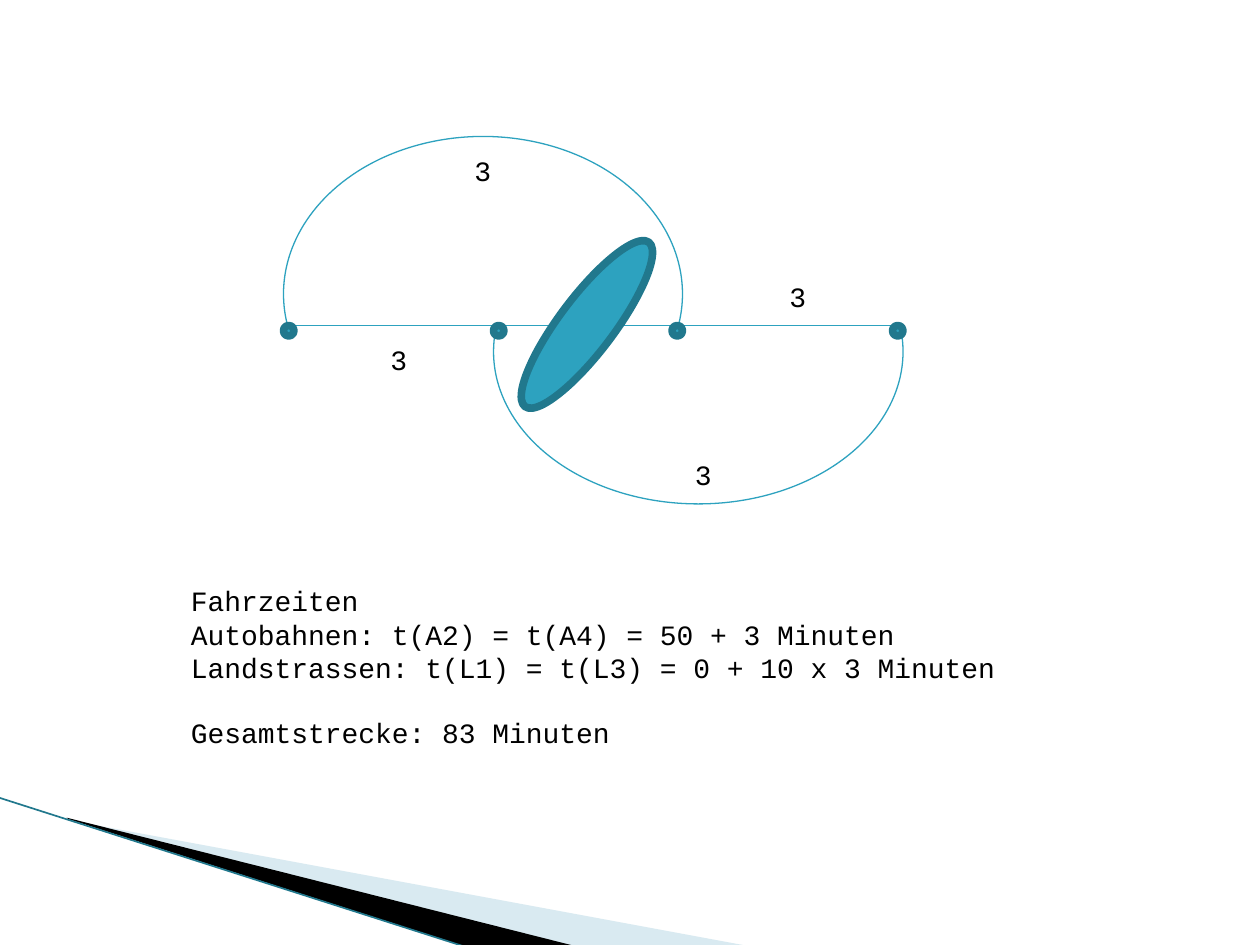
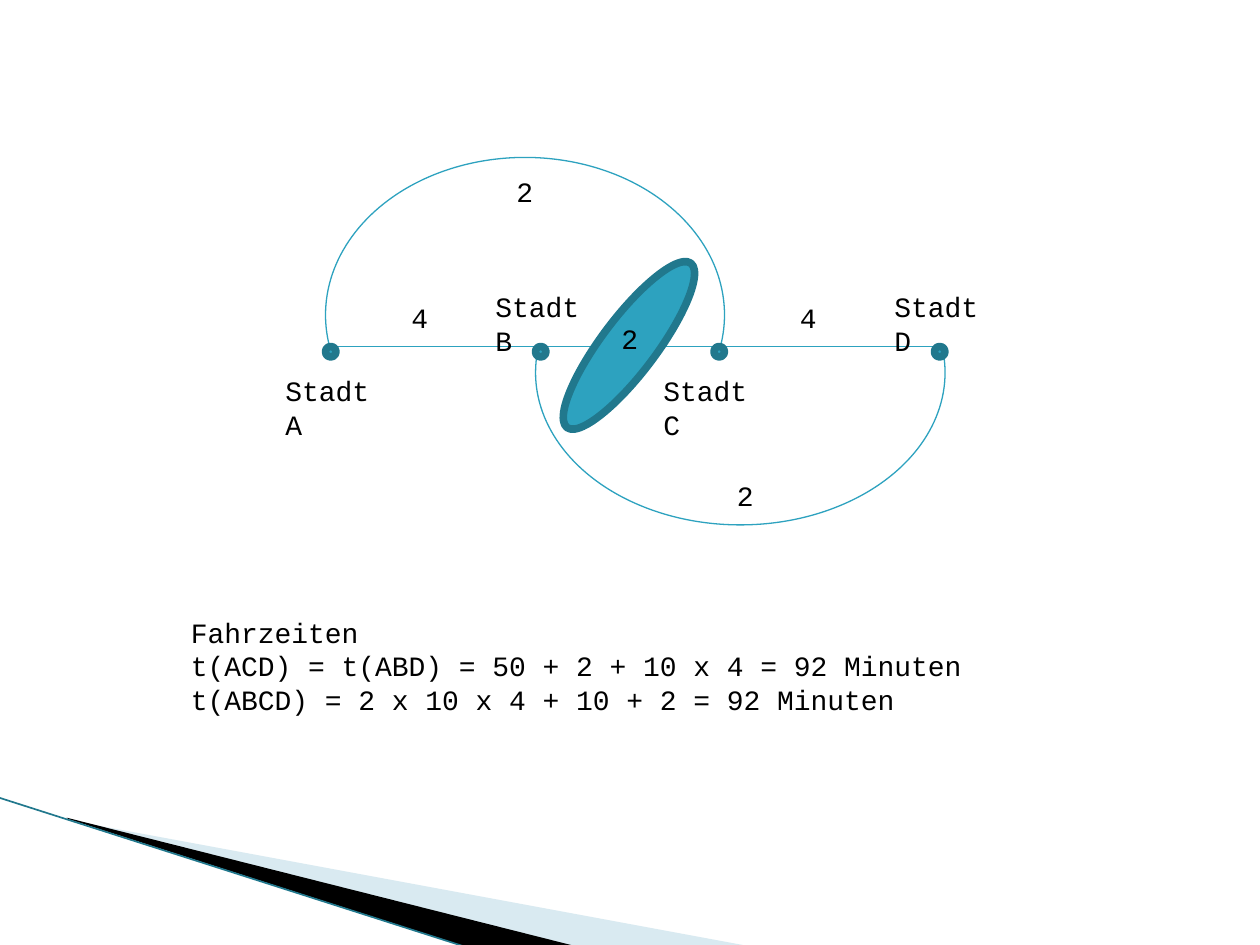
"""Build two slides that compare travel times on a small road network."""
from dataclasses import dataclass

from lxml.etree import SubElement
from pptx import Presentation
from pptx.dml.color import RGBColor
from pptx.enum.shapes import MSO_CONNECTOR, MSO_SHAPE
from pptx.enum.text import PP_ALIGN
from pptx.oxml.ns import qn
from pptx.util import Inches, Pt

CELL = Inches(1) / 12
COLUMNS, ROWS = 120, 90
TEAL, DARK_TEAL, PALE_TEAL, BLACK = "2DA2BF", "21788D", "A0CBDC", "000000"
TEXT_FORMAT = {"name": "Courier New", "size": Pt(16)}
THIN, THICK = 0.75, 4.33
LABEL_ROWS = 4.4
CITY_COLUMNS = (0, 20, 37, 58)


@dataclass(frozen=True)
class Label:
    """A text placed in grid cells from the first city."""
    text: str
    column: float
    row: float
    columns: float = 4


@dataclass(frozen=True)
class Road:
    """A curved road between two cities with its start and end angles."""
    column: float
    row: float
    columns: float
    rows: float
    angles: tuple[float, float]
    rotation: float = 0


@dataclass(frozen=True)
class Wedge:
    """A filled band at the foot of the slide, with corners in inches."""
    corners: tuple[tuple[float, float], ...]
    colour: str
    opacity: int = 100


@dataclass(frozen=True)
class Scenario:
    """The content of one slide."""
    column: float
    row: float
    labels: tuple[Label, ...]
    lines: tuple[str, ...]
    lines_row: float
    total: str = ""


HIGHWAYS = (
    Road(0, -18, 38, 30, (102.94, 5.11)),
    Road(25, -17, 29, 39, (157.66, 57.98), 90),
)
WEDGES = (
    Wedge(((0.55, 6.51), (5.95, 7.51), (4.56, 7.51), (0.55, 6.5)), PALE_TEAL, 40),
    Wedge(((0.53, 6.49), (4.57, 7.51), (3.72, 7.52), (0.54, 6.5)), BLACK),
)
SCENARIOS = (
    Scenario(
        27, 31,
        (Label("3", 17, -17), Label("3", 38, 12, 5),
         Label("3", 9, 1), Label("3", 47, -5, 5)),
        ("Fahrzeiten",
         "Autobahnen: t(A2) = t(A4) = 50 + 3 Minuten",
         "Landstrassen: t(L1) = t(L3) = 0 + 10 x 3 Minuten"),
        55, "Gesamtstrecke: 83 Minuten"),
    Scenario(
        31, 33,
        (Label("Stadt A", -5, 2, 12), Label("Stadt B", 15, -6, 12),
         Label("Stadt C", 31, 2, 12), Label("Stadt D", 53, -6, 12),
         Label("2", 17, -17), Label("2", 38, 12, 5),
         Label("4", 7, -5), Label("4", 44, -5, 5), Label("2", 27, -3)),
        ("Fahrzeiten",
         "t(ACD) = t(ABD) = 50 + 2 + 10 x 4 = 92 Minuten",
         "t(ABCD) = 2 x 10 x 4 + 10 + 2 = 92 Minuten"),
        58),
)


def cells(*counts: float) -> list[int]:
    """Turn counts of grid cells into lengths."""
    return [round(count * CELL) for count in counts]


def paint(target, colour: str) -> None:
    """Give a fill a solid colour."""
    target.solid()
    target.fore_color.rgb = RGBColor.from_string(colour)


def outline(line, colour: str, width: float) -> None:
    """Give a line its colour and width."""
    paint(line.fill, colour)
    line.width = Pt(width)


def add_line(slide, ends: list[int], colour: str, width: float) -> None:
    """Draw a straight line without a shadow."""
    connector = slide.shapes.add_connector(MSO_CONNECTOR.STRAIGHT, *ends)
    outline(connector.line, colour, width)
    SubElement(connector._element.spPr, qn("a:effectLst"))


def add_wedge(slide, wedge: Wedge) -> None:
    """Draw one band of the footer."""
    corners = [(Inches(x), Inches(y)) for x, y in wedge.corners]
    builder = slide.shapes.build_freeform(*corners[0])
    builder.add_line_segments(corners[1:], close=True)
    shape = builder.convert_to_shape()
    shape.shadow.inherit = False
    shape.line.fill.background()
    paint(shape.fill, wedge.colour)
    if wedge.opacity < 100:
        colour = shape._element.spPr.find(qn("a:solidFill"))[0]
        SubElement(colour, qn("a:alpha"), val=str(wedge.opacity * 1000))


def add_footer(slide) -> None:
    """Draw the bands and the edge that all slides share."""
    for wedge in WEDGES:
        add_wedge(slide, wedge)
    ends = [Inches(value) for value in (-0.01, 6.33, 3.71, 7.52)]
    add_line(slide, ends, DARK_TEAL, 0.95)


def add_road(slide, road: Road, scenario: Scenario) -> None:
    """Draw a curved road."""
    shape = slide.shapes.add_shape(MSO_SHAPE.ARC, *cells(
        scenario.column + road.column, scenario.row + road.row,
        road.columns, road.rows))
    shape.shadow.inherit = False
    shape.fill.background()
    outline(shape.line, TEAL, THIN)
    shape.rotation = road.rotation
    for index, angle in enumerate(road.angles):
        shape.adjustments[index] = angle


def add_ellipse(slide, box: list[int], rotation: float = 0) -> None:
    """Draw a filled ellipse with a thick edge."""
    shape = slide.shapes.add_shape(MSO_SHAPE.OVAL, *box)
    shape.shadow.inherit = False
    paint(shape.fill, TEAL)
    outline(shape.line, DARK_TEAL, THICK)
    shape.rotation = rotation


def add_text(slide, box: list[int], lines: tuple[str, ...]):
    """Write lines of text and return their frame."""
    frame = slide.shapes.add_textbox(*box).text_frame
    frame.word_wrap = True
    frame.text = "\n".join(lines)
    for paragraph in frame.paragraphs:
        paragraph.alignment = PP_ALIGN.LEFT
        for name, value in TEXT_FORMAT.items():
            setattr(paragraph.font, name, value)
        paragraph.font.color.rgb = RGBColor.from_string(BLACK)
    return frame


def add_network(slide, scenario: Scenario) -> None:
    """Draw the roads, the lake, the cities and their labels."""
    column, row = scenario.column, scenario.row
    add_line(slide, cells(column, row, column + 59, row), TEAL, THIN)
    for road in HIGHWAYS:
        add_road(slide, road, scenario)
    add_ellipse(slide, cells(column + 19.1, row - 2.7, 19.6, 5.2), 307)
    for city in CITY_COLUMNS:
        add_ellipse(slide, cells(column + city, row, 1, 1))
    for label in scenario.labels:
        box = cells(column + label.column, row + label.row, label.columns, LABEL_ROWS)
        add_text(slide, box, (label.text,))


def add_travel_times(slide, scenario: Scenario) -> None:
    """Write the travel times, with the total set apart below."""
    lines = scenario.lines + ((scenario.total,) if scenario.total else ())
    rows = 17.4 if scenario.total else 10.9
    frame = add_text(slide, cells(17, scenario.lines_row, 98, rows), lines)
    if scenario.total:
        frame.paragraphs[-1].space_before = Pt(18)


def main() -> None:
    """Build and save the presentation."""
    presentation = Presentation()
    presentation.slide_width, presentation.slide_height = cells(COLUMNS, ROWS)
    for scenario in SCENARIOS:
        slide = presentation.slides.add_slide(presentation.slide_layouts[6])
        add_footer(slide)
        add_network(slide, scenario)
        add_travel_times(slide, scenario)
    presentation.save("out.pptx")


if __name__ == "__main__":
    main()
